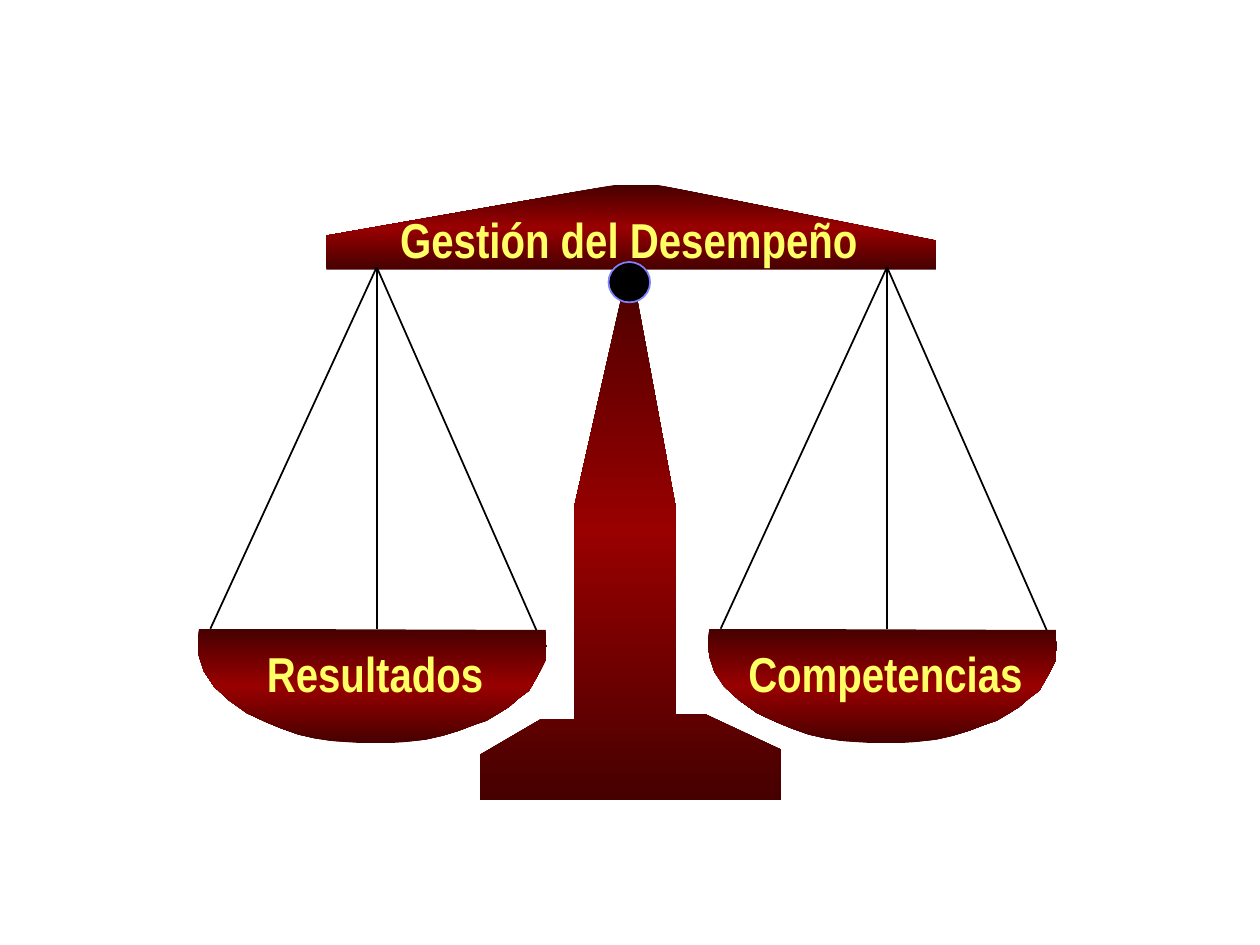
from copy import deepcopy
from dataclasses import dataclass

from pptx import Presentation
from pptx.dml.color import RGBColor
from pptx.enum.shapes import MSO_CONNECTOR, MSO_SHAPE
from pptx.enum.text import MSO_AUTO_SIZE, PP_ALIGN
from pptx.oxml import parse_xml
from pptx.oxml.ns import nsdecls, qn
from pptx.shapes.connector import Connector
from pptx.shapes.autoshape import Shape
from pptx.shapes.shapetree import SlideShapes
from pptx.util import Inches, Pt

STRAIGHT = MSO_CONNECTOR.STRAIGHT
OVAL = MSO_SHAPE.OVAL
CENTER, LEFT = PP_ALIGN.CENTER, PP_ALIGN.LEFT
FIT_SHAPE = MSO_AUTO_SIZE.SHAPE_TO_FIT_TEXT

Point = tuple[float, float]


@dataclass(frozen=True)
class Theme:
    dark_red: RGBColor = RGBColor(0x47, 0x00, 0x00)
    red: RGBColor = RGBColor(0x99, 0x00, 0x00)
    yellow: RGBColor = RGBColor(0xFF, 0xFF, 0x66)
    black: RGBColor = RGBColor(0x00, 0x00, 0x00)
    violet: RGBColor = RGBColor(0x80, 0x80, 0xFF)
    font: str = "Arial Narrow"
    label_size: Pt = Pt(28)
    line_width: Pt = Pt(1)


@dataclass(frozen=True)
class Label:
    text: str
    left: float
    top: float
    width: float
    height: float
    centered: bool = False


THEME = Theme()
ARM_GAP = 4.05
HOOK: Point = (2.99, 2.12)
ROPE_ENDS: list[Point] = [(4.27, 5.03), (2.99, 4.99), (1.67, 4.99)]
BEAM: list[Point] = [
    (2.59, 2.14), (7.43, 2.14), (7.43, 1.91), (5.23, 1.47), (4.87, 1.47), (2.59, 1.87),
]
COLUMN: list[Point] = [
    (5, 2.06), (5.36, 4.01), (5.36, 5.67), (5.6, 5.67), (6.2, 5.95), (6.2, 6.35),
    (3.81, 6.35), (3.81, 5.99), (4.29, 5.71), (4.56, 5.71), (4.56, 4.01),
]
PAN: list[Point] = [
    (1.58, 4.99), (1.57, 5.09), (1.58, 5.21), (1.62, 5.33), (1.7, 5.45), (1.82, 5.56),
    (1.96, 5.66), (2.11, 5.73), (2.23, 5.78), (2.37, 5.83), (2.5, 5.86), (2.63, 5.88),
    (2.75, 5.89), (2.91, 5.9), (3.06, 5.9), (3.21, 5.89), (3.38, 5.87), (3.51, 5.84),
    (3.64, 5.8), (3.77, 5.75), (3.86, 5.72), (3.96, 5.66), (4.04, 5.61), (4.12, 5.54),
    (4.2, 5.48), (4.24, 5.41), (4.29, 5.32), (4.33, 5.24), (4.34, 5.13), (4.33, 5),
]
LABELS = [
    Label("Competencias", 5.84, 5.06, 2.38, 0.56),
    Label("Resultados", 2.02, 5.06, 1.93, 0.57),
]
TITLE = Label("Gestión del Desempeño", 2.51, 1.61, 4.96, 0.57, centered=True)


def shifted(points: list[Point], dx: float) -> list[Point]:
    """Move points sideways by dx inches."""
    return [(x + dx, y) for x, y in points]


def add_metal_part(shapes: SlideShapes, outline: list[Point]) -> Shape:
    """Draw a closed outline with the dark-red-dark vertical gradient."""
    corners = [(Inches(x), Inches(y)) for x, y in outline]
    builder = shapes.build_freeform(*corners[0])
    builder.add_line_segments(corners[1:], close=True)
    part = builder.convert_to_shape()
    part.shadow.inherit = False
    part.line.fill.background()
    part.fill.gradient()
    part.fill.gradient_angle = 270
    stop_list = part._element.spPr.find(qn("a:gradFill")).find(qn("a:gsLst"))
    stop_list.append(deepcopy(stop_list[0]))
    colors = (THEME.dark_red, THEME.red, THEME.dark_red)
    for stop, position, color in zip(part.fill.gradient_stops, (0, 0.5, 1), colors):
        stop.position = position
        stop.color.rgb = color
    return part


def add_rope(shapes: SlideShapes, start: Point, end: Point) -> Connector:
    """Draw one thin rope between two points."""
    rope = shapes.add_connector(STRAIGHT, *(Inches(value) for value in (*start, *end)))
    rope.line.color.rgb = THEME.black
    rope.line.width = THEME.line_width
    rope._element.spPr.append(parse_xml(f"<a:effectLst {nsdecls('a')}/>"))
    return rope


def add_scale_arm(shapes: SlideShapes, dx: float) -> None:
    """Draw one pan hanging from its three ropes."""
    hook = shifted([HOOK], dx)[0]
    for end in shifted(ROPE_ENDS, dx):
        add_rope(shapes, hook, end)
    add_metal_part(shapes, shifted(PAN, dx))


def add_pivot(shapes: SlideShapes) -> Shape:
    """Draw the round pivot under the beam."""
    pivot = shapes.add_shape(OVAL, Inches(4.83), Inches(2.08), Inches(0.33), Inches(0.32))
    pivot.shadow.inherit = False
    pivot.fill.solid()
    pivot.fill.fore_color.rgb = THEME.black
    pivot.line.color.rgb = THEME.violet
    pivot.line.width = THEME.line_width
    return pivot


def add_label(shapes: SlideShapes, label: Label) -> Shape:
    """Write a bold yellow label with a black text shadow."""
    box = shapes.add_textbox(
        Inches(label.left), Inches(label.top), Inches(label.width), Inches(label.height)
    )
    frame = box.text_frame
    frame.word_wrap = label.centered
    frame.auto_size = FIT_SHAPE
    paragraph = frame.paragraphs[0]
    paragraph.alignment = CENTER if label.centered else LEFT
    run = paragraph.add_run()
    run.text = label.text
    run.font.size = THEME.label_size
    run.font.bold = True
    run.font.color.rgb = THEME.yellow
    shadow = parse_xml(
        f'<a:effectLst {nsdecls("a")}><a:outerShdw dist="35921" dir="2700000">'
        f'<a:srgbClr val="{THEME.black}"/></a:outerShdw></a:effectLst>'
    )
    run._r.get_or_add_rPr().append(shadow)
    run.font.name = THEME.font
    return box


def main() -> None:
    """Build the balance slide and save it."""
    presentation = Presentation()
    presentation.slide_width, presentation.slide_height = Inches(10), Inches(7.5)
    slide = presentation.slides.add_slide(presentation.slide_layouts[6])
    shapes = slide.shapes
    add_metal_part(shapes, BEAM)
    add_metal_part(shapes, COLUMN)
    for dx in (0, ARM_GAP):
        add_scale_arm(shapes, dx)
    for label in LABELS:
        add_label(shapes, label)
    add_pivot(shapes)
    add_label(shapes, TITLE)
    presentation.save("out.pptx")


if __name__ == "__main__":
    main()
